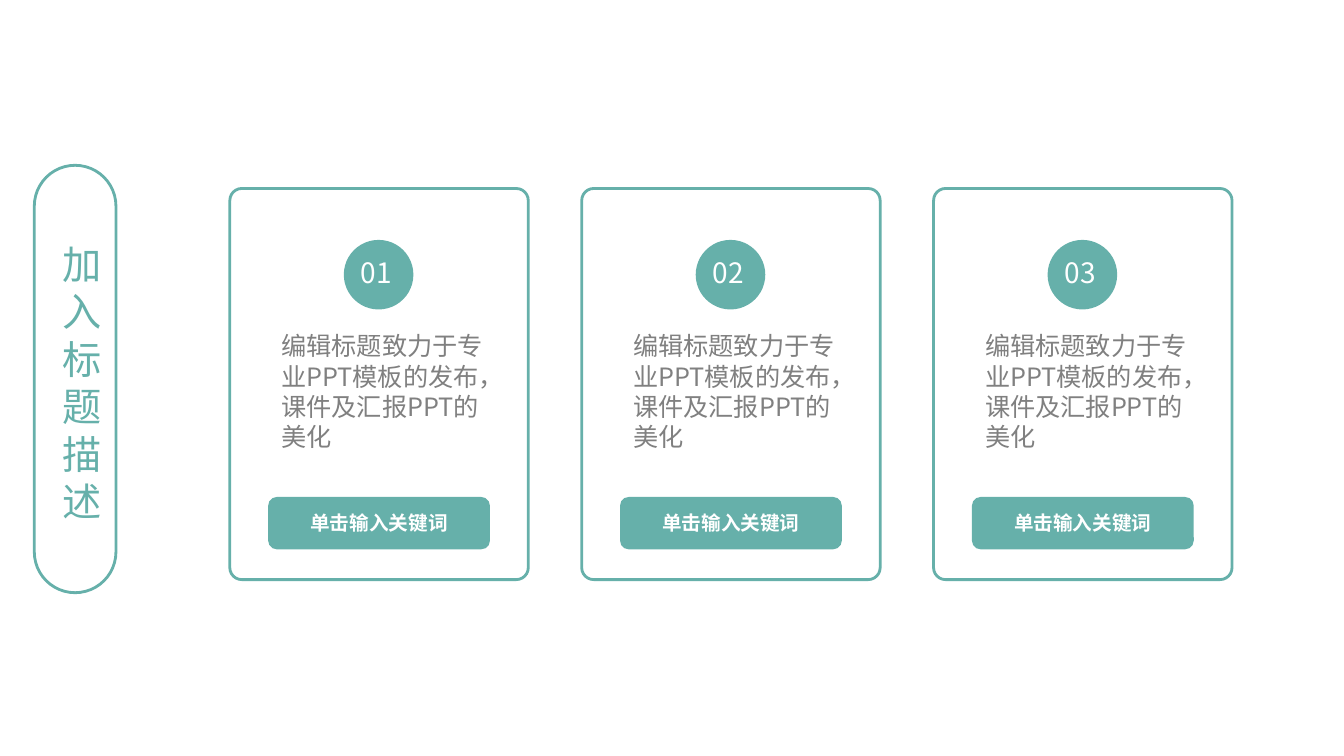
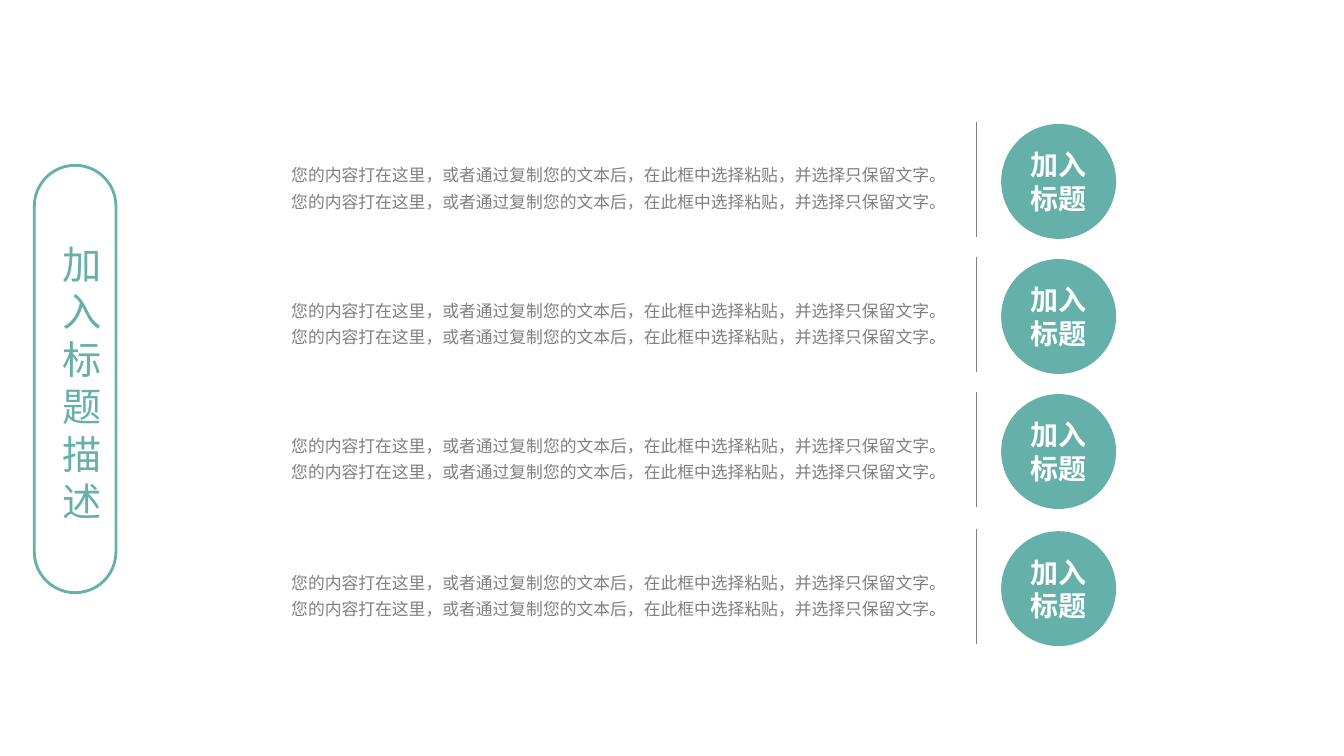
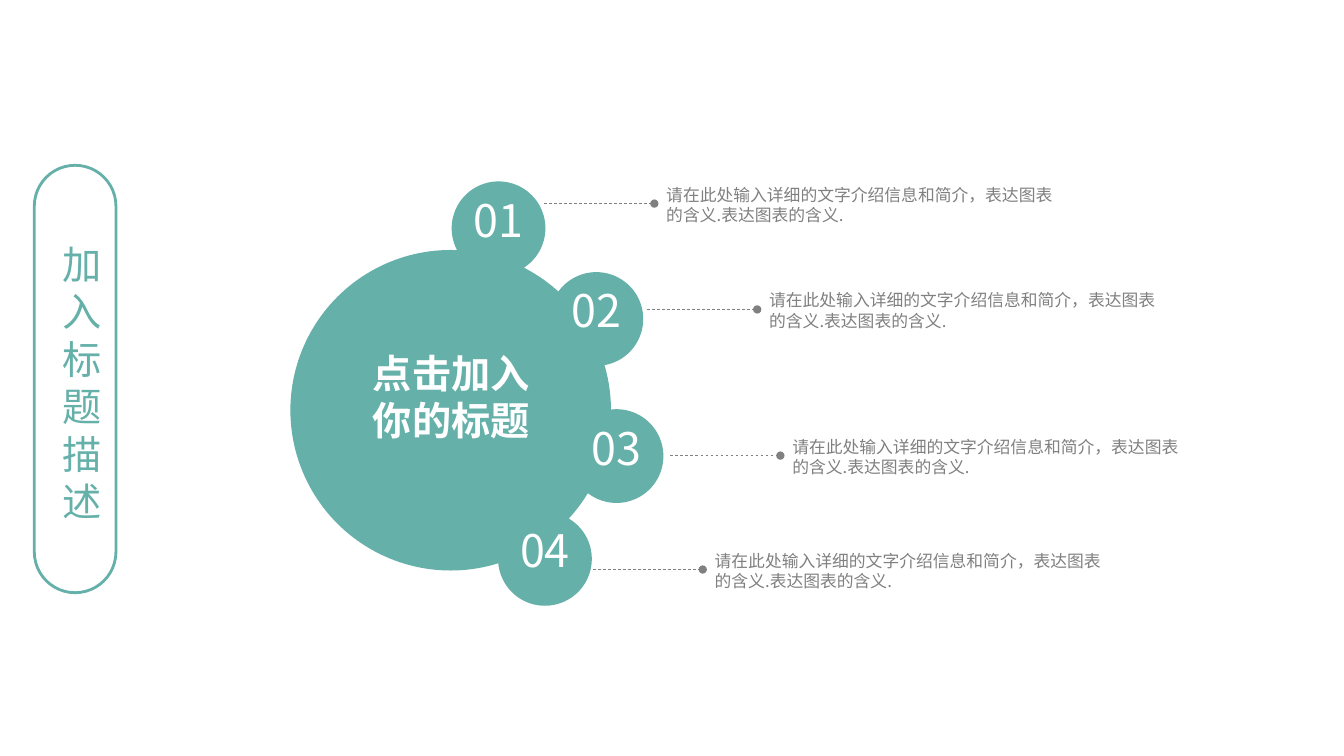
from lxml import etree
from pptx import Presentation
from pptx.dml.color import RGBColor
from pptx.enum.dml import MSO_LINE
from pptx.enum.shapes import MSO_CONNECTOR, MSO_SHAPE
from pptx.enum.text import MSO_ANCHOR, MSO_AUTO_SIZE, PP_ALIGN
from pptx.oxml.ns import qn
from pptx.util import Inches, Pt

TEAL = RGBColor(0x66, 0xB0, 0xAA)
GRAY = RGBColor(0x80, 0x80, 0x80)
WHITE = RGBColor(0xFF, 0xFF, 0xFF)
FONT = "Noto Sans CJK SC"

ROUNDED = MSO_SHAPE.ROUNDED_RECTANGLE
OVAL = MSO_SHAPE.OVAL
STRAIGHT = MSO_CONNECTOR.STRAIGHT
DASH = MSO_LINE.DASH
LEFT, CENTER = PP_ALIGN.LEFT, PP_ALIGN.CENTER
MIDDLE = MSO_ANCHOR.MIDDLE
GROW = MSO_AUTO_SIZE.SHAPE_TO_FIT_TEXT

TITLE = "加入标题描述"
CARD_TEXT = "编辑标题致力于专业PPT模板的发布，课件及汇报PPT的美化"
CARD_BUTTON = "单击输入关键词"
ROW_SENTENCE = "您的内容打在这里，或者通过复制您的文本后，在此框中选择粘贴，并选择只保留文字。"
ROW_LABEL = "加入标题"
HUB_LABEL = "点击加入你的标题"
CALLOUT_TEXT = "请在此处输入详细的文字介绍信息和简介，表达图表的含义.表达图表的含义."

CARD_LEFT, CARD_TOP, CARD_PITCH = 2.28, 1.87, 3.49
ROW_TOPS = (1.23, 2.57, 3.91, 5.27)
SATELLITES = (
    (4.48, 1.8, 5.4, 2.02),
    (5.45, 2.7, 6.42, 3.07),
    (5.65, 4.06, 6.65, 4.52),
    (4.94, 5.08, 5.88, 5.65),
)


def write(shape, text, size, color, bold=False, align=LEFT):
    frame = shape.text_frame
    frame.text = text
    para = frame.paragraphs[0]
    para.alignment = align
    span = para.runs[0]
    span.font.size = Pt(size)
    span.font.bold = bold
    span.font.color.rgb = color
    span.font.name = FONT
    latin = span.font._element.find(qn("a:latin"))
    east_asian = etree.Element(qn("a:ea"), typeface=FONT)
    latin.addnext(east_asian)
    return span


def add_text(page, box, text, size, color, bold=False, align=LEFT, grow=True):
    label = page.shapes.add_textbox(*map(Inches, box))
    write(label, text, size, color, bold, align)
    label.text_frame.word_wrap = True
    if grow:
        label.text_frame.auto_size = GROW
    return label


def add_shape(page, kind, box, filled=True):
    shape = page.shapes.add_shape(kind, *map(Inches, box))
    shape.shadow.inherit = False
    if filled:
        shape.fill.solid()
        shape.fill.fore_color.rgb = TEAL
        shape.line.fill.background()
    else:
        shape.fill.background()
        shape.line.color.rgb = TEAL
        shape.line.width = Pt(2)
    return shape


def add_label_shape(page, kind, box, text, size):
    shape = add_shape(page, kind, box)
    shape.text_frame.vertical_anchor = MIDDLE
    shape.text_frame.word_wrap = True
    write(shape, text, size, WHITE, True, CENTER)


def add_line(page, start, end, width):
    line = page.shapes.add_connector(STRAIGHT, *map(Inches, start + end))
    line.line.color.rgb = GRAY
    line.line.width = Pt(width)
    etree.SubElement(line._element.spPr, qn("a:effectLst"))
    return line


def add_page(deck):
    page = deck.slides.add_slide(deck.slide_layouts[6])
    pill = add_shape(page, ROUNDED, (0.34, 1.64, 0.81, 4.24), filled=False)
    pill.adjustments[0] = 0.5
    title = add_text(page, (0.41, 2.33, 0.67, 2.96), TITLE, 28, TEAL, align=CENTER)
    title.text_frame._txBody.bodyPr.set("vert", "eaVert")
    title.text_frame.paragraphs[0].runs[0].font._element.set("spc", "600")
    return page


def add_card(page, left, top, number):
    frame = add_shape(page, ROUNDED, (left, top, 2.96, 3.88), filled=False)
    frame.adjustments[0] = 0.04
    add_label_shape(page, ROUNDED, (left + 0.38, top + 3.06, 2.2, 0.52), CARD_BUTTON, 14)
    body = add_text(page, (left + 0.38, top + 1.34, 2.36, 1.3), CARD_TEXT, 18, GRAY, grow=False)
    inner = body.text_frame
    inner.margin_left = inner.margin_right = Inches(0.13)
    inner.margin_top = inner.margin_bottom = Inches(0.07)
    add_shape(page, OVAL, (left + 1.13, top + 0.51, 0.69, 0.69))
    add_text(page, (left + 1.2, top + 0.62, 0.69, 0.44), number, 20, WHITE)


def add_row(page, left, top):
    add_label_shape(page, OVAL, (left + 7.14, top, 1.14, 1.14), ROW_LABEL, 20)
    body = add_text(page, (left, top + 0.3, 6.75, 0.63), ROW_SENTENCE * 2, 12, GRAY)
    body.text_frame.paragraphs[0].line_spacing = 1.3
    divider = left + 6.9
    add_line(page, (divider, top - 0.02), (divider, top + 1.12), 0.75)


def add_hub(page, left, top):
    add_shape(page, OVAL, (left, top, 3.18, 3.18))
    add_text(page, (left + 0.6, top + 0.94, 1.99, 1.04), HUB_LABEL, 28, WHITE, True, CENTER)


def add_satellite(page, left, top, number):
    add_shape(page, OVAL, (left, top, 0.93, 0.93))
    label = add_text(page, (left + 0.12, top + 0.06, 0.73, 0.64), number, 32, WHITE)
    label.text_frame.word_wrap = False


def add_callout(page, left, top):
    leader = add_line(page, (left, top), (left + 1.09, top), 0.5)
    leader.line.dash_style = DASH
    etree.SubElement(leader.line._get_or_add_ln(), qn("a:tailEnd"), type="oval")
    add_text(page, (left + 1.11, top - 0.24, 4.17, 0.86), CALLOUT_TEXT, 12, GRAY, grow=False)


def build_cards(deck):
    page = add_page(deck)
    for index in range(3):
        add_card(page, CARD_LEFT + index * CARD_PITCH, CARD_TOP, f"{index + 1:02}")


def build_rows(deck):
    page = add_page(deck)
    for top in ROW_TOPS:
        add_row(page, 2.79, top)


def build_hub(deck):
    page = add_page(deck)
    add_hub(page, 2.88, 2.48)
    for index, (left, top, leader_left, leader_top) in enumerate(SATELLITES, 1):
        add_satellite(page, left, top, f"{index:02}")
        add_callout(page, leader_left, leader_top)


def main():
    deck = Presentation()
    deck.slide_width = Inches(13.33)
    deck.slide_height = Inches(7.5)
    build_cards(deck)
    build_rows(deck)
    build_hub(deck)
    deck.save("out.pptx")


if __name__ == "__main__":
    main()
